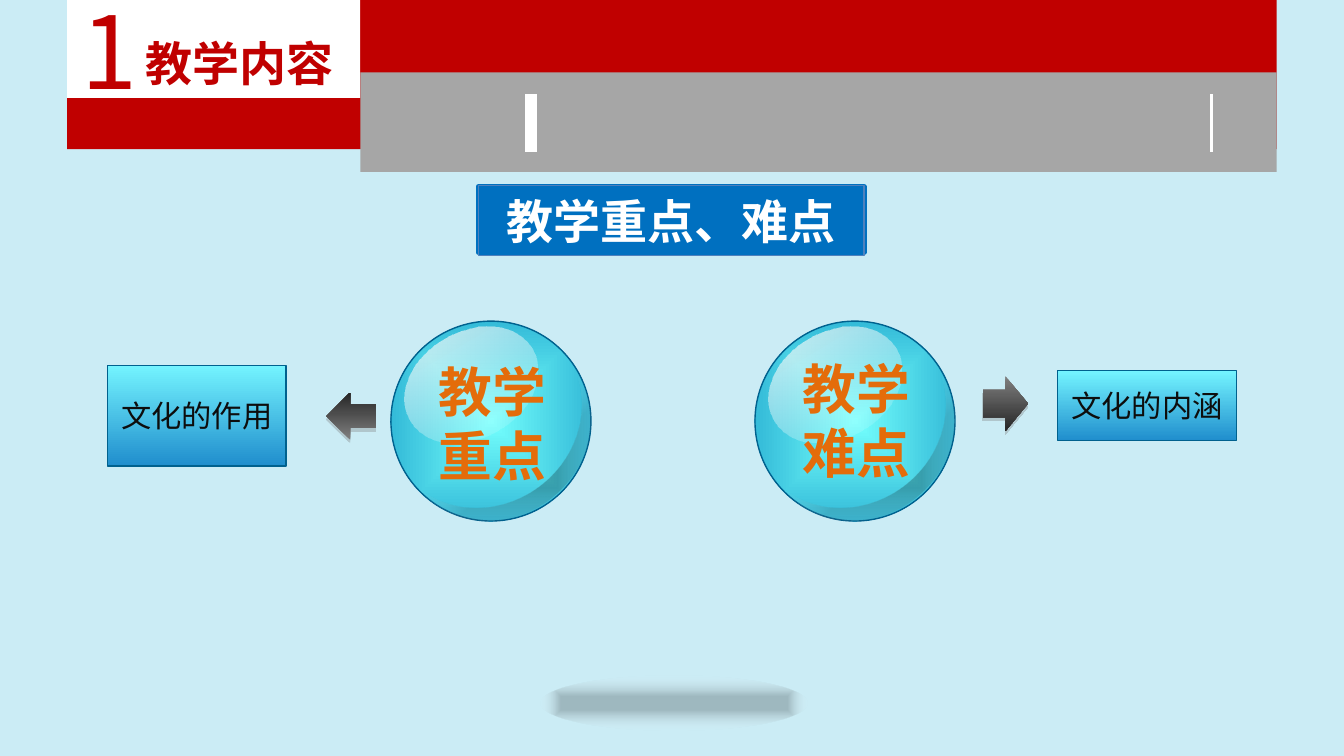
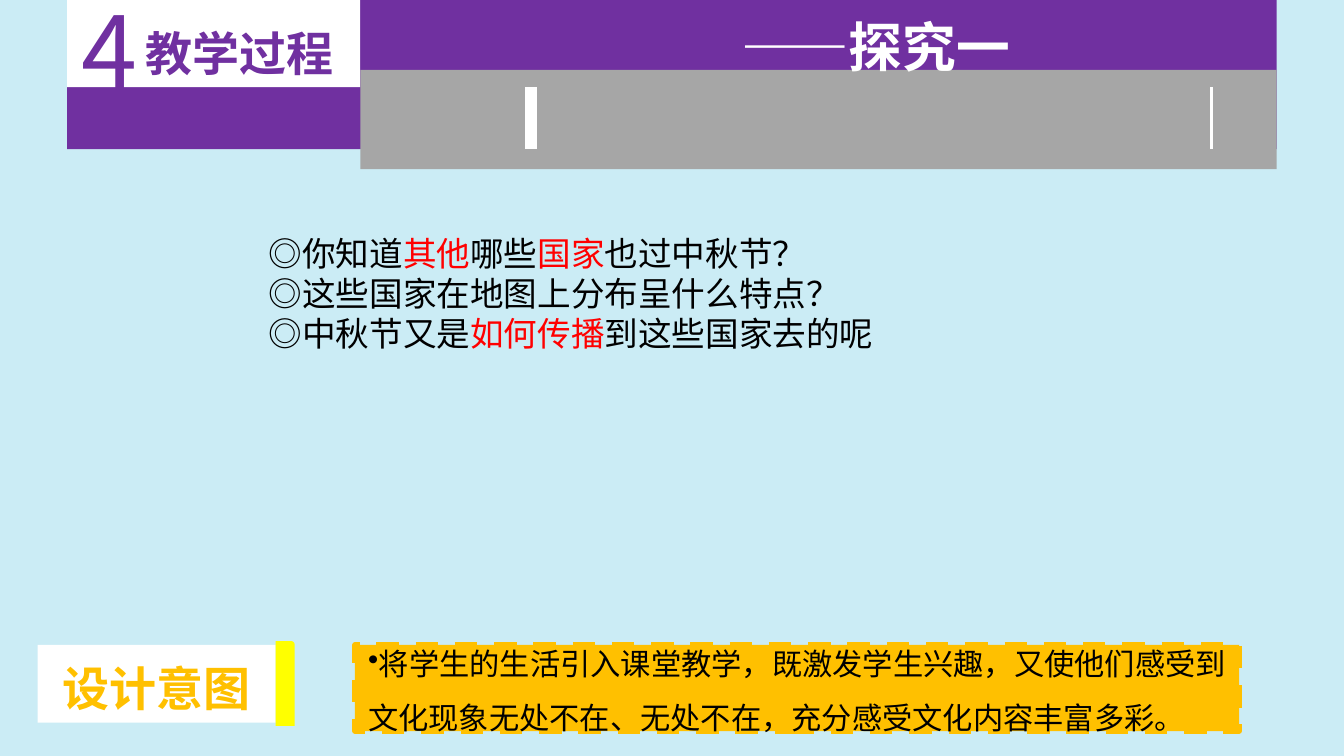
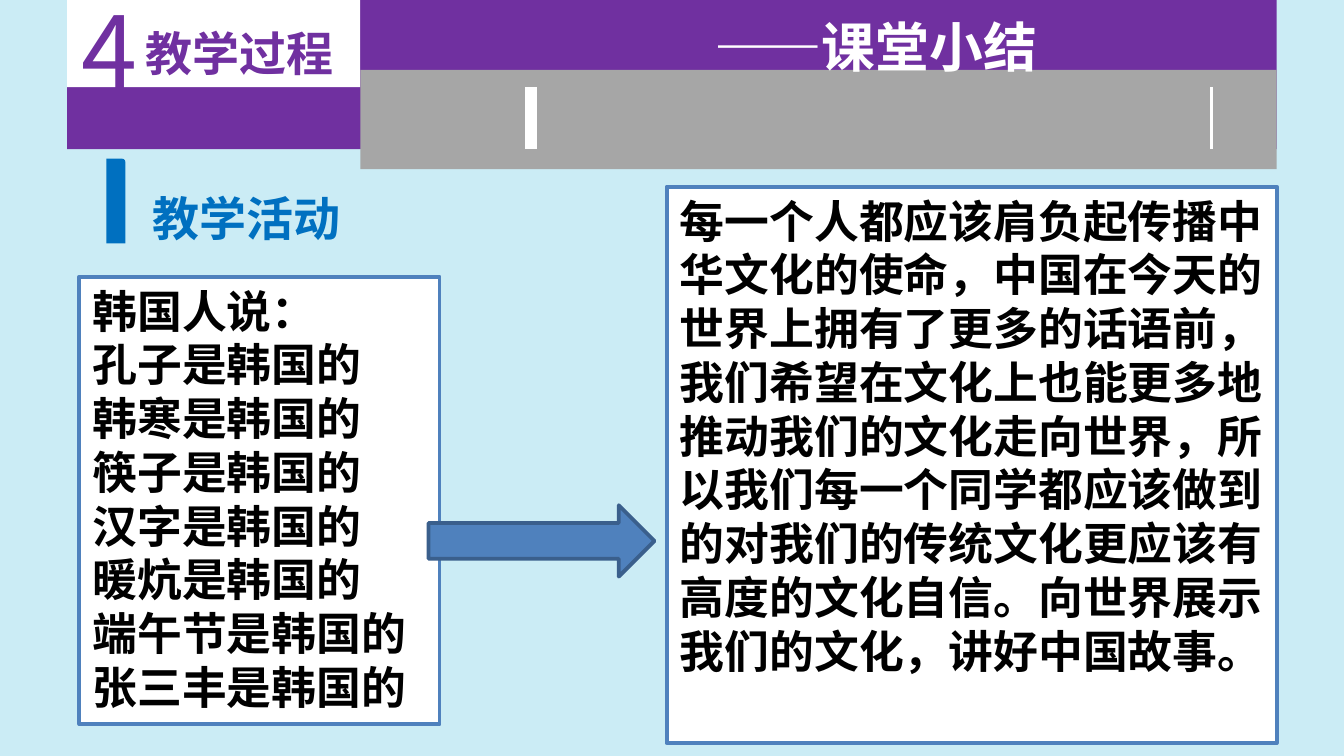
from dataclasses import dataclass, replace
from typing import Optional

from lxml import etree
from pptx import Presentation
from pptx.dml.color import RGBColor
from pptx.enum.dml import MSO_LINE
from pptx.enum.shapes import MSO_CONNECTOR, MSO_SHAPE
from pptx.enum.text import MSO_ANCHOR, PP_ALIGN
from pptx.oxml.ns import qn
from pptx.util import Cm, Pt

RECT, OVAL, MOON = MSO_SHAPE.RECTANGLE, MSO_SHAPE.OVAL, MSO_SHAPE.MOON
ARROW, TAB = MSO_SHAPE.RIGHT_ARROW, MSO_SHAPE.ROUND_1_RECTANGLE
LINE, DASH = MSO_CONNECTOR.STRAIGHT, MSO_LINE.DASH
LEFT, MID = PP_ALIGN.LEFT, PP_ALIGN.CENTER
TOP, CENTER, BOTTOM = MSO_ANCHOR.TOP, MSO_ANCHOR.MIDDLE, MSO_ANCHOR.BOTTOM

SKY = RGBColor(0xCB, 0xEC, 0xF5)
WHITE = RGBColor(0xFF, 0xFF, 0xFF)
BLACK = RGBColor(0, 0, 0)
INK = RGBColor(0x0D, 0x0D, 0x0D)
GREY = RGBColor(0xA6, 0xA6, 0xA6)
CRIMSON = RGBColor(0xC0, 0, 0)
PURPLE = RGBColor(0x70, 0x30, 0xA0)
RED = RGBColor(0xFF, 0, 0)
BLUE = RGBColor(0, 0x70, 0xC0)
STEEL = RGBColor(0x4F, 0x81, 0xBD)
NAVY = RGBColor(0x3A, 0x5F, 0x8C)
TEAL = RGBColor(0, 0x61, 0x8E)
ORANGE = RGBColor(0xE4, 0x6C, 0x0A)
GOLD = RGBColor(0xFF, 0xC0, 0)
YELLOW = RGBColor(0xFF, 0xFF, 0)

SANS = "Noto Sans CJK SC"


@dataclass(frozen=True)
class Box:
    """Left, top, width and height in centimetres."""
    x: float
    y: float
    w: float
    h: float

    def emu(self) -> tuple:
        return Cm(self.x), Cm(self.y), Cm(self.w), Cm(self.h)


@dataclass(frozen=True)
class Look:
    size: float
    color: RGBColor
    bold: bool = False
    font: str = SANS
    align: PP_ALIGN = LEFT
    anchor: MSO_ANCHOR = TOP
    space: float = 1.0


@dataclass(frozen=True)
class Stop:
    at: int
    color: str
    alpha: int = 100


@dataclass(frozen=True)
class Grad:
    """Two colour stops, running downwards or out from the middle."""
    first: Stop
    last: Stop
    round: bool = False


@dataclass(frozen=True)
class Head:
    num: str
    title: str
    color: RGBColor
    tab: float
    band: float
    bar: tuple
    note: str = ""


@dataclass(frozen=True)
class Topic:
    """A ball, the arrow beside it and the box it points to."""
    ball: float
    words: tuple
    text: float
    arrow: Box
    turn: int
    box: Box
    goal: str


HEAVY = Look(25.2, WHITE, True, align=MID)
NOTE = Look(28.8, WHITE, True, align=MID)
BALL = replace(NOTE, color=ORANGE)
GOAL = Look(16.2, INK, align=MID, anchor=CENTER)
LABEL = Look(25.2, BLUE, True, "Lato", LEFT, CENTER, 1.14)
PANEL = Look(24, BLACK, True)

DARK = Grad(Stop(0, "7F7F7F"), Stop(100, "262626"))
GLASS = Grad(Stop(0, "74FFFD"), Stop(100, "20A6CD"), True)
PLATE = Grad(Stop(0, "74F4FF"), Stop(100, "208ECD"))
GLOSS = Grad(Stop(0, "FFFCF9", 77), Stop(100, "FFFFFF", 0))
DIM = Grad(Stop(24, "000000", 24), Stop(100, "FFFFFF", 0), True)
HAZE = replace(DIM, first=Stop(24, "000000", 22))

PART_ONE = Head("1", "教学内容", CRIMSON, -0.03, 1.37, (1.78, 2.87))
PART_FOUR = Head("4", "教学过程", PURPLE, -0.23, 1.32, (1.65, 2.82))

TOPICS = (
    Topic(7.39, ("教学", "重点"), 6.65, Box(6.17, 7.42, 0.94, 0.89), 180,
          Box(2.03, 6.91, 3.38, 1.9), "文化的作用"),
    Topic(14.27, ("教学", "难点"), 6.6, Box(18.57, 7.11, 0.86, 1.04), 0,
          Box(19.99, 7.01, 3.38, 1.32), "文化的内涵"),
)

ASKS = (
    "◎你知道*其他*哪些*国家*也过中秋节？",
    "◎这些国家在地图上分布呈什么特点？",
    "◎中秋节又是*如何传播*到这些国家去的呢",
)
AIM = ("将学生的生活引入课堂教学，既激发学生兴趣，又使他们感受到文化现象"
       "无处不在、无处不在，充分感受文化内容丰富多彩。")
CLAIMS = ("韩国人说：", "孔子是韩国的", "韩寒是韩国的", "筷子是韩国的",
          "汉字是韩国的", "暖炕是韩国的", "端午节是韩国的", "张三丰是韩国的")
CALL = ("每一个人都应该肩负起传播中华文化的使命，中国在今天的世界上拥有了更多的"
        "话语前，我们希望在文化上也能更多地推动我们的文化走向世界，所以我们每一个"
        "同学都应该做到的对我们的传统文化更应该有高度的文化自信。向世界展示我们的"
        "文化，讲好中国故事。")


def node(parent, tag: str, **attrs):
    return etree.SubElement(parent, qn(tag), {k: str(v) for k, v in attrs.items()})


def tint(parent, color: str, alpha: int) -> None:
    node(node(parent, "a:srgbClr", val=color), "a:alpha", val=alpha * 1000)


def blend(shape, grad: Grad) -> None:
    shape.fill.gradient()
    fill = shape._element.spPr.find(qn("a:gradFill"))
    fill.clear()
    fill.set("rotWithShape", "1")
    stops = node(fill, "a:gsLst")
    for stop in (grad.first, grad.last):
        tint(node(stops, "a:gs", pos=stop.at * 1000), stop.color, stop.alpha)
    if grad.round:
        way = node(fill, "a:path", path="shape")
        node(way, "a:fillToRect", l=50000, t=50000, r=50000, b=50000)
    else:
        node(fill, "a:lin", ang=5400000, scaled=0)


def write(shape, lines: tuple, look: Look) -> None:
    """Set one paragraph a line; text between asterisks turns red."""
    frame = shape.text_frame
    frame.word_wrap = True
    frame.vertical_anchor = look.anchor
    for i, line in enumerate(lines):
        para = frame.add_paragraph() if i else frame.paragraphs[0]
        para.alignment = look.align
        para.line_spacing = look.space
        for j, part in enumerate(line.split("*")):
            run = para.add_run()
            run.text = part
            font = run.font
            font.size, font.bold = Pt(look.size), look.bold
            font.color.rgb = RED if j % 2 else look.color
            font.name = look.font
            node(font._element, "a:ea", typeface=SANS)


def draw(slide, kind, box: Box, fill=None, line: Optional[RGBColor] = None,
         width: float = 0.75, turn: float = 0, flip: bool = False):
    shape = slide.shapes.add_shape(kind, *box.emu())
    shape.shadow.inherit = False
    shape.rotation = turn
    if flip:
        shape._element.spPr.find(qn("a:xfrm")).set("flipH", "1")
    if isinstance(fill, Grad):
        blend(shape, fill)
    elif fill is None:
        shape.fill.background()
    else:
        shape.fill.solid()
        shape.fill.fore_color.rgb = fill
    if line is None:
        shape.line.fill.background()
    else:
        shape.line.color.rgb = line
        shape.line.width = Pt(width)
    return shape


def label(slide, box: Box, lines: tuple, look: Look):
    shape = slide.shapes.add_textbox(*box.emu())
    write(shape, lines, look)
    return shape


def rule(slide, x: float, ends: tuple, width: float) -> None:
    top, foot = ends
    bar = slide.shapes.add_connector(LINE, Cm(x), Cm(top), Cm(x), Cm(foot))
    bar.line.color.rgb = WHITE
    bar.line.width = Pt(width)
    node(bar._element.spPr, "a:effectLst")


def start(deck, head: Head):
    """Add a slide with its background and header."""
    slide = deck.slides.add_slide(deck.slide_layouts[6])
    back = slide.background.fill
    back.solid()
    back.fore_color.rgb = SKY
    draw(slide, RECT, Box(1.27, -0.05, 22.86, 2.87), head.color)
    draw(slide, RECT, Box(6.81, head.band, 17.32, 1.88), GREY)
    rule(slide, 10.03, head.bar, 6.5)
    rule(slide, 22.89, head.bar, 1.5)
    tab = draw(slide, RECT, Box(1.27, head.tab, 5.54, 1.88), WHITE)
    write(tab, (head.title,),
          replace(HEAVY, color=head.color, anchor=BOTTOM, space=1.5))
    tab.text_frame.margin_left = Cm(1.22)
    num = label(slide, Box(1.3, -0.33, 1.45, 2.57), (head.num,),
                Look(54, head.color))
    num.text_frame.word_wrap = False
    if head.note:
        label(slide, Box(11.94, 0.13, 9.22, 1.47), (head.note,), NOTE)
    return slide


def show(slide, topic: Topic) -> None:
    x = topic.ball
    draw(slide, OVAL, Box(x, 6.07, 3.78, 3.78), GLASS, TEAL, turn=338.6, flip=True)
    moon = draw(slide, MOON, Box(x + 1.65, 6.93, 1.68, 3.68), DIM,
                turn=53.6, flip=True)
    moon.adjustments[0] = 0.19
    draw(slide, OVAL, Box(x + 0.18, 6.27, 2.67, 2.01), GLOSS, turn=329.4, flip=True)
    label(slide, Box(x + 0.1, topic.text, 3.63, 2.72), topic.words, BALL)

    arrow = draw(slide, ARROW, topic.arrow, DARK, turn=topic.turn)
    effect = arrow._element.spPr.find(qn("a:effectLst"))
    cast = node(effect, "a:outerShdw", dist=Pt(1.8), dir=5400000, rotWithShape=0)
    tint(cast, "808080", 35)

    goal = draw(slide, RECT, topic.box, PLATE, TEAL)
    write(goal, (topic.goal,), GOAL)
    goal.text_frame.margin_left = goal.text_frame.margin_right = 0


def focus(deck) -> None:
    slide = start(deck, PART_ONE)
    draw(slide, OVAL, Box(10.21, 12.78, 5.05, 1.02), HAZE)
    for topic in TOPICS:
        show(slide, topic)
    draw(slide, RECT, Box(9.04, 3.53, 7.29, 1.24), BLUE, BLUE, 2.75)
    frame = draw(slide, RECT, Box(9.04, 3.51, 7.29, 1.32), line=STEEL)
    write(frame, ("教学重点、难点",), HEAVY)


def explore(deck) -> None:
    slide = start(deck, replace(PART_FOUR, note="——探究一"))
    label(slide, Box(4.83, 4.27, 17.07, 3.33), ASKS, Look(18, BLACK))
    plan = draw(slide, RECT, Box(0.71, 12.19, 4.5, 1.47), WHITE)
    write(plan, ("设计意图",), replace(LABEL, color=GOLD, align=MID))
    draw(slide, TAB, Box(5.21, 12.12, 0.36, 1.6), YELLOW)
    edge = draw(slide, RECT, Box(6.71, 12.19, 16.71, 1.63), GOLD, GOLD, 3)
    edge.line.dash_style = DASH
    aim = label(slide, Box(6.71, 11.73, 17.09, 2.34), (AIM,),
                Look(16.2, BLACK, font="Calibri", space=1.5))
    props = aim.text_frame.paragraphs[0]._p.get_or_add_pPr()
    node(props, "a:buChar", char="•")


def close(deck) -> None:
    slide = start(deck, replace(PART_FOUR, note="——课堂小结"))
    label(slide, Box(2.64, 3.3, 13.97, 1.47), ("教学活动",), LABEL)
    draw(slide, TAB, Box(2.01, 3, 0.36, 1.6), BLUE)
    panels = (
        (Box(1.5, 5.23, 6.81, 8.46), CLAIMS, PANEL),
        (Box(12.6, 3.53, 11.53, 10.52), (CALL,), replace(PANEL, font="Calibri")),
    )
    for box, lines, look in panels:
        write(draw(slide, RECT, box, WHITE, STEEL, 2), lines, look)
    draw(slide, ARROW, Box(8.1, 9.55, 4.27, 1.35), STEEL, NAVY, 2)


def main() -> None:
    deck = Presentation()
    deck.slide_width, deck.slide_height = Cm(25.4), Cm(14.29)
    focus(deck)
    explore(deck)
    close(deck)
    deck.save("out.pptx")


if __name__ == "__main__":
    main()
